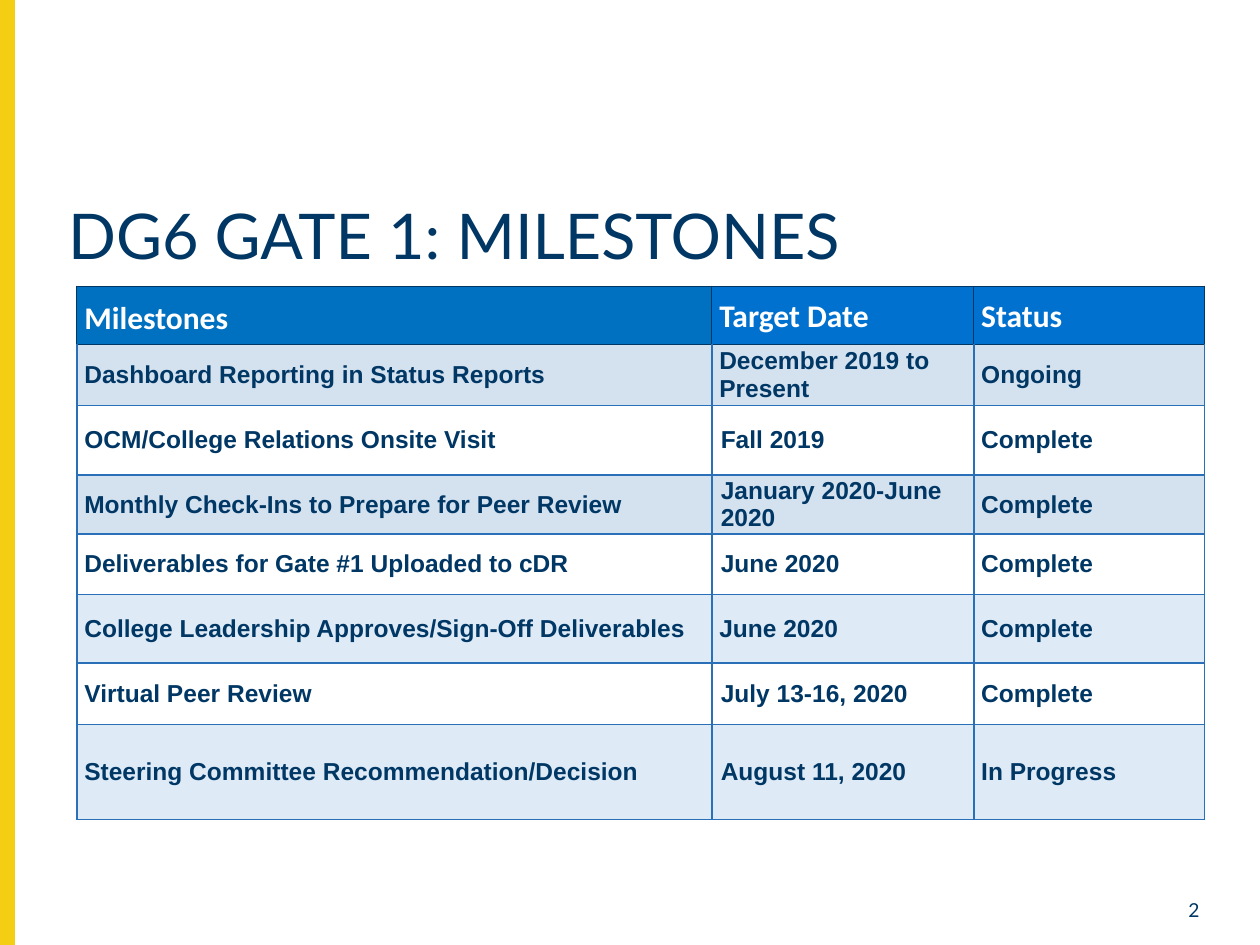
from lxml.etree import SubElement
from pptx import Presentation
from pptx.dml.color import RGBColor
from pptx.enum.shapes import MSO_SHAPE
from pptx.enum.text import MSO_ANCHOR, PP_ALIGN
from pptx.oxml import parse_xml
from pptx.oxml.ns import nsdecls, qn
from pptx.util import Cm, Pt

COLORS = {
    "navy": "003764", "blue": "2A70B8", "yellow": "F4CE12", "white": "FFFFFF",
    "head_first": "0070C0", "head": "0071CE", "pale": "DEEBF7",
}


def rgb(name):
    return RGBColor.from_string(COLORS[name])


def write(tf, text, size=14, font="Arial", color="navy", bold=False,
          align=PP_ALIGN.LEFT, spacing=1.0):
    tf.word_wrap = True
    tf.vertical_anchor = MSO_ANCHOR.MIDDLE
    p = tf.paragraphs[0]
    p.alignment, p.line_spacing = align, spacing
    r = p.add_run()
    r.text = text
    r.font.size, r.font.name, r.font.bold = Pt(size), font, bold
    r.font.color.rgb = rgb(color)


prs = Presentation()
prs.slide_width, prs.slide_height = Cm(25.4), Cm(19.05)
s = prs.slides.add_slide(prs.slide_layouts[5])

# Side bar
sp = s.shapes.add_shape(MSO_SHAPE.RECTANGLE, 0, 0, Cm(0.28), prs.slide_height)
sp.shadow.inherit = False
sp.fill.solid()
sp.fill.fore_color.rgb = rgb("yellow")
sp.line.color.rgb = rgb("yellow")
sp.line.width = Pt(1)

# Title
title = s.shapes.title
title.left, title.top, title.width, title.height = Cm(1.12), Cm(4.01), Cm(23.16), Cm(1.63)
write(title.text_frame, "DG6 GATE 1: MILESTONES", size=36, font="Lato", spacing=0.9)

# Milestone table: text, row height and body fill
rows = [
    (("Milestones", "Target Date", "Status"), 1.18, "head"),
    (("Dashboard Reporting in Status Reports", "December 2019 to Present", "Ongoing"), 1.22, "tint"),
    (("OCM/College Relations Onsite Visit", "Fall 2019", "Complete"), 1.41, None),
    (("Monthly Check-Ins to Prepare for Peer Review", "January 2020-June 2020", "Complete"), 1.18, "tint"),
    (("Deliverables for Gate #1 Uploaded to cDR", "June 2020", "Complete"), 1.22, None),
    (("College Leadership Approves/Sign-Off Deliverables", "June 2020", "Complete"), 1.39, "pale"),
    (("Virtual Peer Review", "July 13-16, 2020", "Complete"), 1.24, None),
    (("Steering Committee Recommendation/Decision", "August 11, 2020", "In Progress"), 1.91, "pale"),
]
widths = [12.8, 5.28, 4.65]
indented_dates = {2, 3, 4, 6, 7}

table = s.shapes.add_table(len(rows), len(widths), Cm(1.55), Cm(5.77), Cm(sum(widths)),
                           Cm(sum(height for _, height, _ in rows))).table
table.first_row = table.horz_banding = False
for col, width in zip(table.columns, widths):
    col.width = Cm(width)

for i, (texts, height, fill) in enumerate(rows):
    table.rows[i].height = Cm(height)
    for j, text in enumerate(texts):
        cell = table.cell(i, j)
        cell.margin_left = Cm(0.18 if j == 1 and i in indented_dates else 0.15)
        cell.margin_right = Cm(0.15)
        cell.margin_top = cell.margin_bottom = 0
        cell.vertical_anchor = MSO_ANCHOR.MIDDLE
        if i == 0:
            write(cell.text_frame, text, size=18, font="Calibri", color="white",
                  bold=True, spacing=1.07 if j else 1.15)
        else:
            write(cell.text_frame, text, bold=True)

        # Fill, with the tint as transparent blue
        tcPr = cell._tc.get_or_add_tcPr()
        if fill is None:
            cell.fill.background()
        else:
            name = {"tint": "blue", "head": "head" if j else "head_first"}.get(fill, fill)
            cell.fill.solid()
            cell.fill.fore_color.rgb = rgb(name)
            if fill == "tint":
                SubElement(tcPr.find(".//" + qn("a:srgbClr")), qn("a:alpha"), val="20000")

        # Borders stand before the fill
        for k, side in enumerate(("L", "R", "T", "B")):
            dark = i == 0 or (i == 1 and side == "T")
            color, points = ("navy", 0.75) if dark else ("blue", 1)
            tcPr.insert(k, parse_xml(
                f'<a:ln{side} {nsdecls("a")} w="{Pt(points)}"><a:solidFill>'
                f'<a:srgbClr val="{COLORS[color]}"/></a:solidFill></a:ln{side}>'))

# Slide number
sp = s.shapes.add_textbox(Cm(23.42), Cm(18.01), Cm(1.3), Cm(0.66))
write(sp.text_frame, "2", size=11, font="Lato", align=PP_ALIGN.CENTER)

prs.save("out.pptx")
